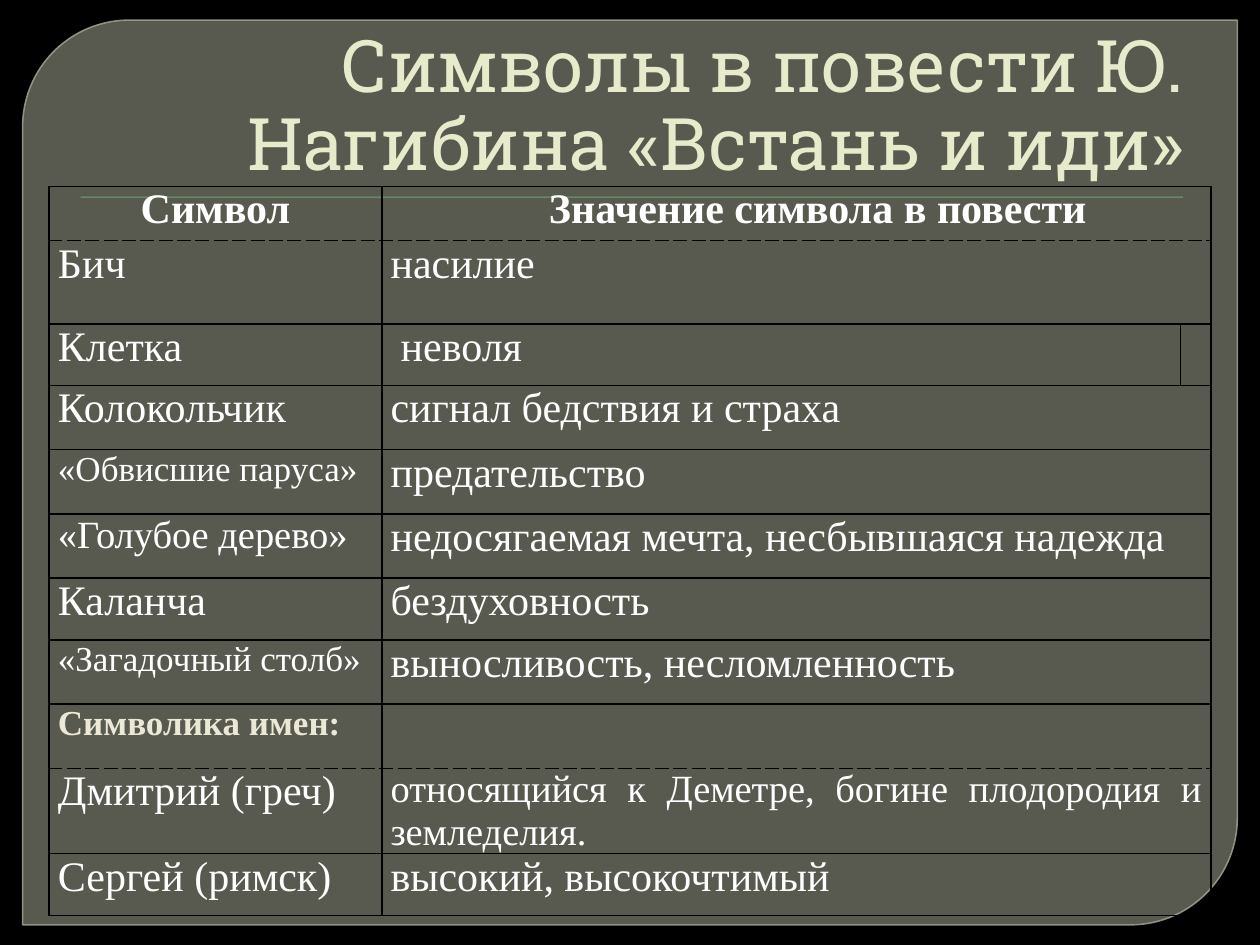
from lxml import etree
from pptx import Presentation
from pptx.dml.color import RGBColor
from pptx.enum import shapes, text
from pptx.oxml.ns import qn
from pptx.util import Inches, Pt

# Content: symbol, its size, meaning, its size
TITLE = "Символы в повести Ю. Нагибина «Встань и иди»"
HEAD = ("Символ", 24, "Значение символа в повести", 24)
ROWS = [
    HEAD,
    ("Бич", 24, "насилие", 24),
    ("Клетка", 24, "неволя", 24),
    ("Колокольчик", 24, "сигнал бедствия и страха", 24),
    ("«Обвисшие паруса»", 20, "предательство", 24),
    ("«Голубое дерево»", 22, "недосягаемая мечта, несбывшаяся надежда", 24),
    ("Каланча", 24, "бездуховность", 24),
    ("«Загадочный столб»", 20, "выносливость, несломленность", 24),
    ("Символика имен:", 20, "", 20),
    ("Дмитрий (греч)", 24,
     "относящийся к Деметре, богине плодородия и земледелия.", 22),
    ("Сергей (римск)", 24, "высокий, высокочтимый", 24),
]
WIDTHS = [2.64, 6.34, 0.24]
HEIGHTS = [0.43, 0.66, 0.49, 0.51, 0.51, 0.51, 0.49, 0.51, 0.51, 0.67, 0.49]
SPLIT, NAMES = 2, 8          # row with a third cell, row of the names heading
DASHED = (0, NAMES)          # rows with a dashed lower edge
INDENT = {(0, 1): 0.41, (SPLIT, 1): 0.15}


def color(code):
    return RGBColor.from_string(code)


def fade(fill, share):
    tone = fill._xPr.find(".//" + qn("a:srgbClr"))
    etree.SubElement(tone, qn("a:alpha"), val=str(share * 1000))


def edge(cell, side, dash="solid"):
    line = etree.SubElement(cell._tc.get_or_add_tcPr(), qn("a:" + side),
                            w=str(Pt(1)))
    fill = etree.SubElement(line, qn("a:solidFill"))
    etree.SubElement(fill, qn("a:srgbClr"), val="000000")
    etree.SubElement(line, qn("a:prstDash"), val=dash)


def style(par, font, size, code, bold=False):
    for run in par.runs:
        run.font.name, run.font.size, run.font.bold = font, Pt(size), bold
        run.font.color.rgb = color(code)


def block(slide, kind, box, code):
    shape = slide.shapes.add_shape(kind, *map(Inches, box))
    shape.shadow.inherit = False
    shape.fill.solid()
    shape.fill.fore_color.rgb = color(code)
    return shape


def write(cell, words, size, row, col):
    cell.margin_left = Inches(INDENT.get((row, col), 0.07))
    cell.margin_right = Inches(0.07)
    cell.margin_top = cell.margin_bottom = 0
    cell.text = words
    par = cell.text_frame.paragraphs[0]
    par.alignment = text.PP_ALIGN.JUSTIFY if row else text.PP_ALIGN.CENTER
    if not words:
        par.font.size = Pt(size)
    code = "EBE8D5" if row == NAMES else "FFFFFF"
    style(par, "Times New Roman", size, code, row in DASHED)


def main():
    prs = Presentation()
    prs.slide_width, prs.slide_height = Inches(10), Inches(7.5)
    slide = prs.slides.add_slide(prs.slide_layouts[5])
    slide.background.fill.solid()
    slide.background.fill.fore_color.rgb = color("000000")

    # Panel and rule
    kinds = shapes.MSO_SHAPE
    panel = block(slide, kinds.ROUND_2_DIAG_RECTANGLE,
                  (0.18, 0.16, 9.64, 7.18), "888B7B")
    panel.adjustments[0], panel.adjustments[1] = 0.118, 0
    fade(panel.fill, 65)
    panel.line.color.rgb = color("9DA090")
    panel.line.width = Pt(0.87)
    fade(panel.line.fill, 88)
    rule = block(slide, kinds.RECTANGLE, (0.64, 1.56, 8.75, 0.01), "72A376")
    rule.line.fill.background()

    # Title, in front of the panel
    title = slide.shapes.title
    rule._element.addnext(title._element)
    title.left, title.top, title.width, title.height = map(
        Inches, (0.5, 0.28, 9, 1.25))
    frame = title.text_frame
    frame.text = TITLE
    frame.word_wrap = True
    frame.auto_size = text.MSO_AUTO_SIZE.NONE
    frame.vertical_anchor = text.MSO_ANCHOR.BOTTOM
    par = frame.paragraphs[0]
    par.alignment = text.PP_ALIGN.RIGHT
    par.line_spacing = 0.9
    style(par, "Roboto Slab", 41.4, "E7EACB")

    # Table
    table = slide.shapes.add_table(
        len(ROWS), len(WIDTHS), Inches(0.39), Inches(1.48),
        Inches(sum(WIDTHS)), Inches(sum(HEIGHTS))).table
    for col, width in zip(table.columns, WIDTHS):
        col.width = Inches(width)
    for r, (name, size, sense, big) in enumerate(ROWS):
        table.rows[r].height = Inches(HEIGHTS[r])
        if r != SPLIT:
            table.cell(r, 1).merge(table.cell(r, 2))
        parts = [(name, size), (sense, big), ("", 12)]
        for c, (words, points) in enumerate(parts):
            cell = table.cell(r, c)
            write(cell, words, points, r, c)
            edge(cell, "lnL")
            edge(cell, "lnR")
            edge(cell, "lnT", "dash" if r - 1 in DASHED else "solid")
            edge(cell, "lnB", "dash" if r in DASHED else "solid")
            cell.fill.background()

    prs.save("out.pptx")


if __name__ == "__main__":
    main()
